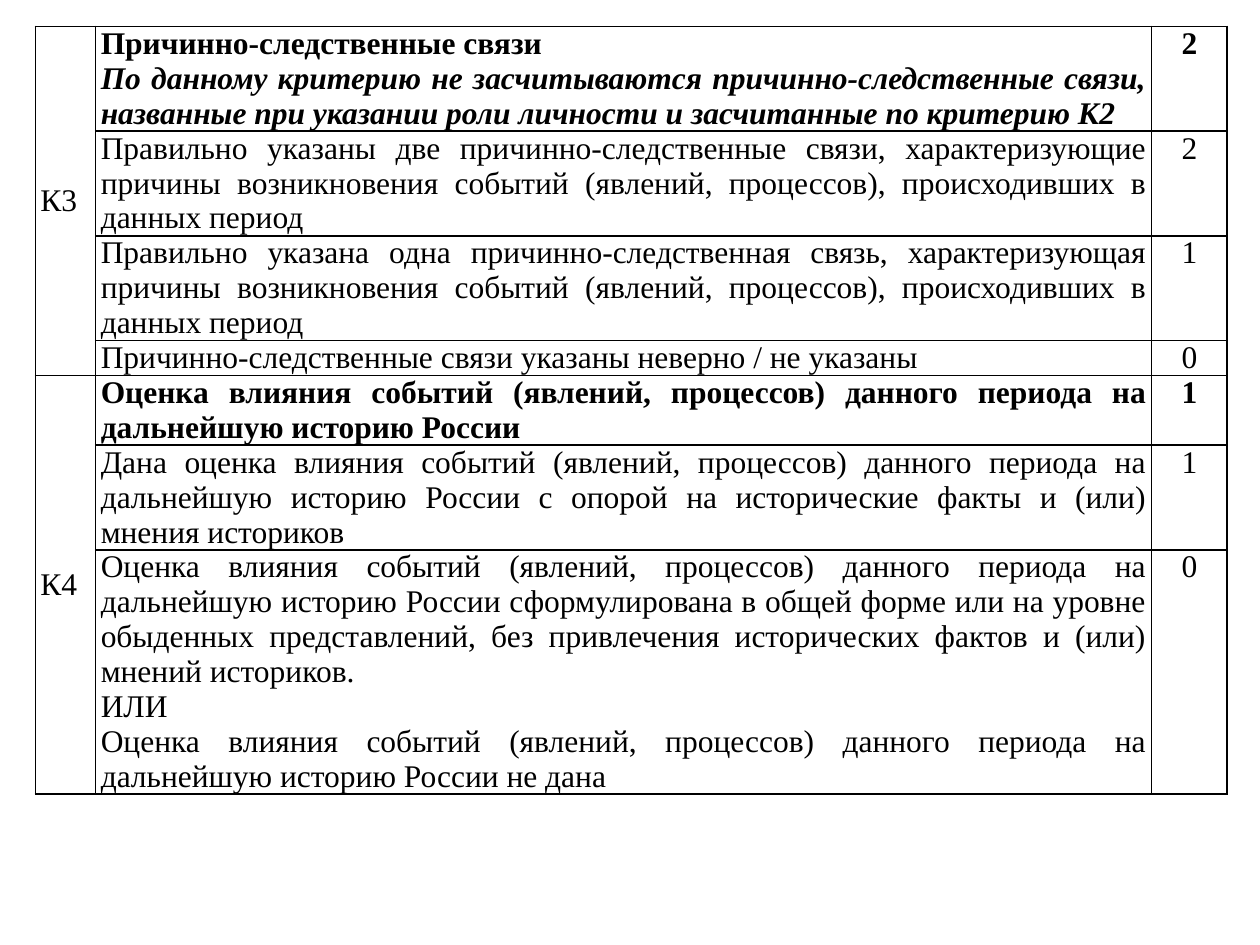
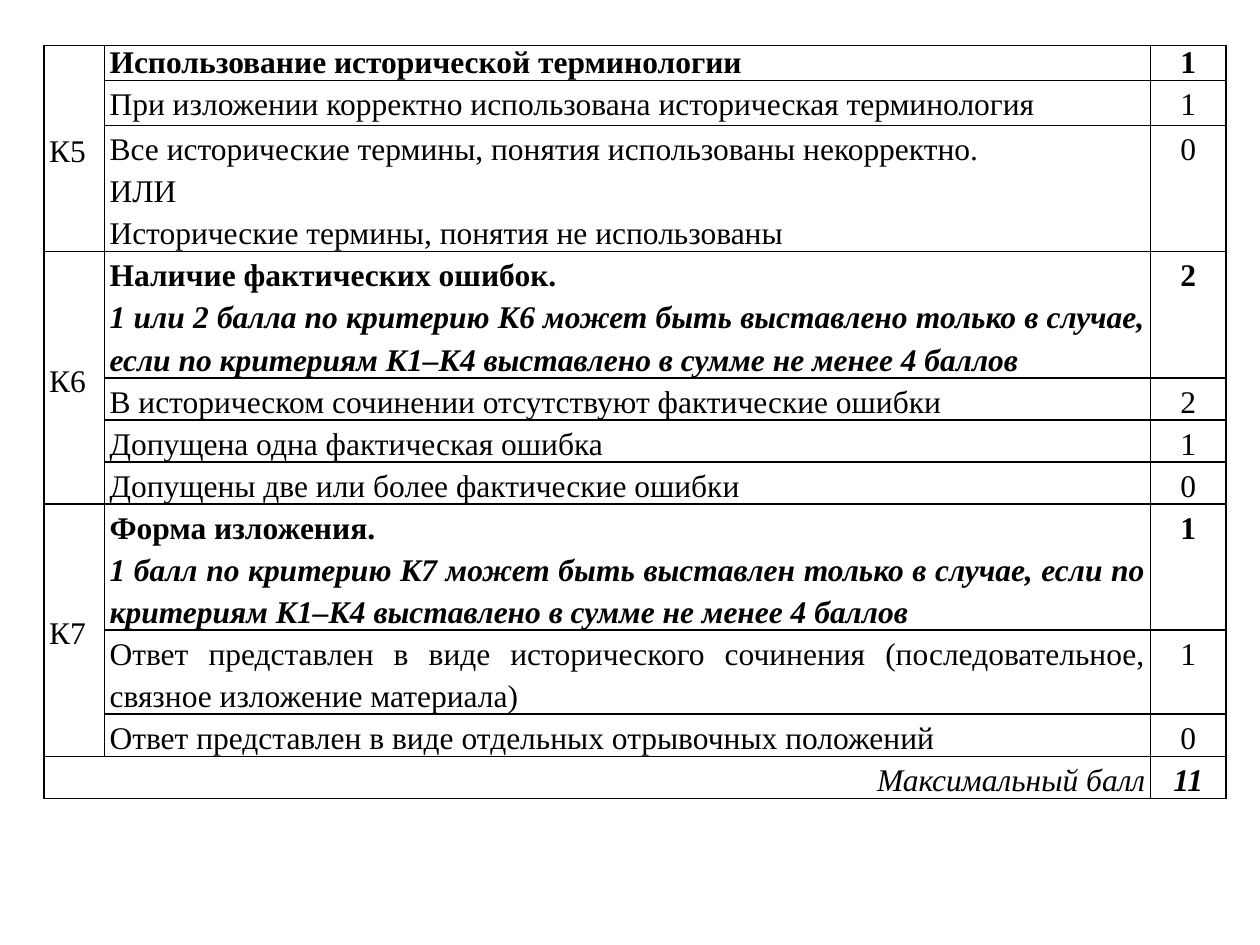
from dataclasses import dataclass
from typing import Optional

from lxml.etree import SubElement
from pptx import Presentation
from pptx.dml.color import RGBColor
from pptx.enum.text import MSO_ANCHOR, PP_ALIGN
from pptx.oxml.ns import qn
from pptx.util import Inches, Length, Pt

# Shared look
INK = RGBColor(0x00, 0x00, 0x00)
FONT = {"name": "Times New Roman", "size": Pt(18)}
INSETS = {
    "margin_left": Inches(0.04), "margin_right": Inches(0.04),
    "margin_top": Inches(0), "margin_bottom": Inches(0),
}
BORDER_WIDTH = Pt(1)
SINGLE_LINE = Inches(0.27)
WIDE_LINE = Pt(24)
PLAIN = {"bold": False, "italic": False}
BOLD = {"bold": True, "italic": False}
ITALIC = {"bold": False, "italic": True}
BOLD_ITALIC = {"bold": True, "italic": True}


@dataclass
class Level:
    """One score level: its paragraphs, its score and its room in lines."""
    paragraphs: list[str]
    score: str
    lines: int = 1
    height: Optional[Length] = None
    single_spaced: bool = False


@dataclass
class Criterion:
    """A criterion; its first level is the bold heading."""
    code: str
    levels: list[Level]


@dataclass
class ScoreTable:
    left: Length
    top: Length
    columns: list[Length]
    criteria: list[Criterion]
    spacing: Optional[Length] = None
    total: Optional[str] = None


CAUSES = ("причинно-следственн{} связ{}, характеризующ{} причины возникновения событий "
          "(явлений, процессов), происходивших в данных период")
IMPACT = "Оценка влияния событий (явлений, процессов) данного периода на дальнейшую историю России"
SUM_RULE = "по критериям К1–К4 выставлено в сумме не менее 4 баллов"

SCORE_TABLES = [
    ScoreTable(
        Inches(0.28), Inches(0.21), [Inches(0.48), Inches(8.38), Inches(0.6)],
        [
            Criterion("К3", [
                Level(["Причинно-следственные связи",
                       "По данному критерию не засчитываются причинно-следственные связи, "
                       "названные при указании роли личности и засчитанные по критерию К2"], "2", 3),
                Level(["Правильно указаны две " + CAUSES.format("ые", "и", "ие")], "2", 3),
                Level(["Правильно указана одна " + CAUSES.format("ая", "ь", "ая")], "1", 3),
                Level(["Причинно-следственные связи указаны неверно / не указаны"], "0"),
            ]),
            Criterion("К4", [
                Level([IMPACT], "1", 2),
                Level(["Дана оценка влияния событий (явлений, процессов) данного периода на "
                       "дальнейшую историю России с опорой на исторические факты и (или) "
                       "мнения историков"], "1", 3),
                Level([IMPACT + " сформулирована в общей форме или на уровне обыденных "
                       "представлений, без привлечения исторических фактов и (или) мнений историков.",
                       "ИЛИ", IMPACT + " не дана"], "0", 7),
            ]),
        ],
    ),
    ScoreTable(
        Inches(0.35), Inches(0.36), [Inches(0.48), Inches(8.3), Inches(0.6)],
        [
            Criterion("К5", [
                Level(["Использование исторической терминологии"], "1",
                      height=SINGLE_LINE, single_spaced=True),
                Level(["При изложении корректно использована историческая терминология"], "1",
                      height=Inches(0.36)),
                Level(["Все исторические термины, понятия использованы некорректно.", "ИЛИ",
                       "Исторические термины, понятия не использованы"], "0", 3),
            ]),
            Criterion("К6", [
                Level(["Наличие фактических ошибок.",
                       "1 или 2 балла по критерию К6 может быть выставлено только в случае, если "
                       + SUM_RULE], "2", 3),
                Level(["В историческом сочинении отсутствуют фактические ошибки"], "2"),
                Level(["Допущена одна фактическая ошибка"], "1"),
                Level(["Допущены две или более фактические ошибки"], "0"),
            ]),
            Criterion("К7", [
                Level(["Форма изложения.",
                       "1 балл по критерию К7 может быть выставлен только в случае, если "
                       + SUM_RULE], "1", 3),
                Level(["Ответ представлен в виде исторического сочинения "
                       "(последовательное, связное изложение материала)"], "1", 2),
                Level(["Ответ представлен в виде отдельных отрывочных положений"], "0"),
            ]),
        ],
        spacing=WIDE_LINE, total="11",
    ),
]


def set_attributes(target, values: dict) -> None:
    for name, value in values.items():
        setattr(target, name, value)


def style_cell(cell) -> None:
    """Give a cell its insets, thin borders and no fill."""
    set_attributes(cell, INSETS)
    properties = cell._tc.get_or_add_tcPr()
    for side in ("lnL", "lnR", "lnT", "lnB"):
        line = SubElement(properties, qn(f"a:{side}"), w=str(BORDER_WIDTH))
        fill = SubElement(line, qn("a:solidFill"))
        SubElement(fill, qn("a:srgbClr"), val=str(INK))
    cell.fill.background()


def write_cell(cell, texts: list[str], alignment: PP_ALIGN, spacing: Optional[Length],
               styles: list[dict]) -> None:
    """Write one paragraph per text, each with its own style."""
    frame = cell.text_frame
    for index, (text, style) in enumerate(zip(texts, styles)):
        para = frame.add_paragraph() if index else frame.paragraphs[0]
        para.alignment = alignment
        if spacing:
            para.line_spacing = spacing
        span = para.add_run()
        span.text = text
        set_attributes(span.font, FONT | style)
        span.font.color.rgb = INK


def draw_criterion(table, first_row: int, criterion: Criterion, spacing: Optional[Length]) -> None:
    code_cell = table.cell(first_row, 0)
    code_cell.merge(table.cell(first_row + len(criterion.levels) - 1, 0))
    code_cell.vertical_anchor = MSO_ANCHOR.MIDDLE
    write_cell(code_cell, [criterion.code], PP_ALIGN.JUSTIFY, spacing, [PLAIN])
    for index, level in enumerate(criterion.levels):
        row = first_row + index
        level_spacing = None if level.single_spaced else spacing
        styles = [PLAIN] * len(level.paragraphs) if index else [BOLD, BOLD_ITALIC]
        table.rows[row].height = level.height or level.lines * (spacing or SINGLE_LINE)
        write_cell(table.cell(row, 1), level.paragraphs, PP_ALIGN.JUSTIFY, level_spacing, styles)
        write_cell(table.cell(row, 2), [level.score], PP_ALIGN.CENTER, level_spacing, styles)


def draw_score_table(page, plan: ScoreTable) -> None:
    row_count = sum(len(criterion.levels) for criterion in plan.criteria) + bool(plan.total)
    frame = page.shapes.add_table(row_count, len(plan.columns), plan.left, plan.top,
                                  sum(plan.columns), row_count * SINGLE_LINE)
    table = frame.table
    set_attributes(table, {"first_row": False, "horz_banding": False})
    for column, width in zip(table.columns, plan.columns):
        column.width = width
    for cell in table.iter_cells():
        style_cell(cell)

    # Criteria, one block under the other
    row = 0
    for criterion in plan.criteria:
        draw_criterion(table, row, criterion, plan.spacing)
        row += len(criterion.levels)

    # Closing total
    if plan.total:
        table.rows[row].height = plan.spacing or SINGLE_LINE
        table.cell(row, 0).merge(table.cell(row, 1))
        write_cell(table.cell(row, 0), ["Максимальный балл"], PP_ALIGN.RIGHT, plan.spacing, [ITALIC])
        write_cell(table.cell(row, 2), [plan.total], PP_ALIGN.CENTER, plan.spacing, [BOLD_ITALIC])


def main() -> None:
    deck = Presentation()
    set_attributes(deck, {"slide_width": Inches(10), "slide_height": Inches(7.5)})
    blank_layout = deck.slide_layouts.get_by_name("Blank")
    for plan in SCORE_TABLES:
        draw_score_table(deck.slides.add_slide(blank_layout), plan)
    deck.save("out.pptx")


if __name__ == "__main__":
    main()
